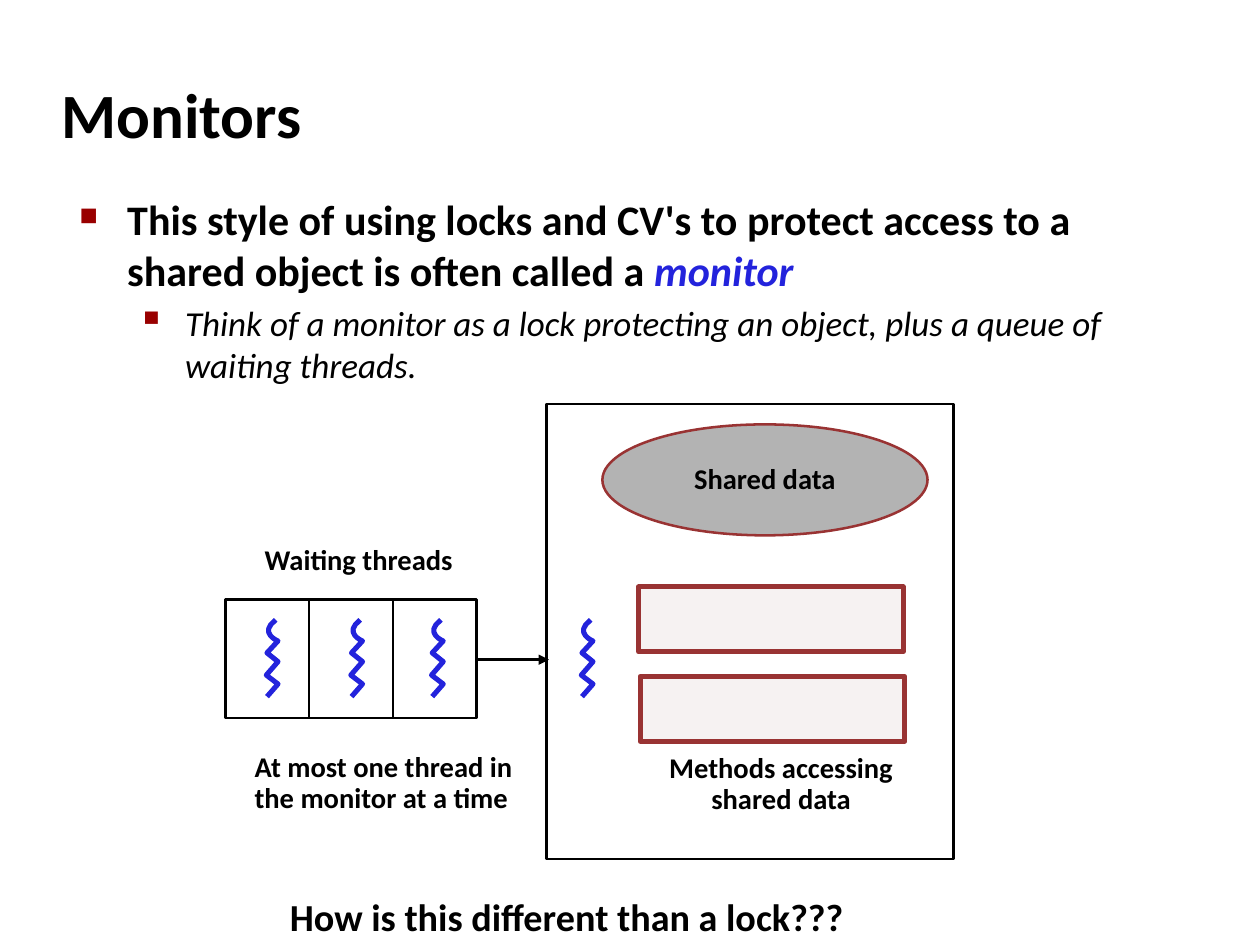
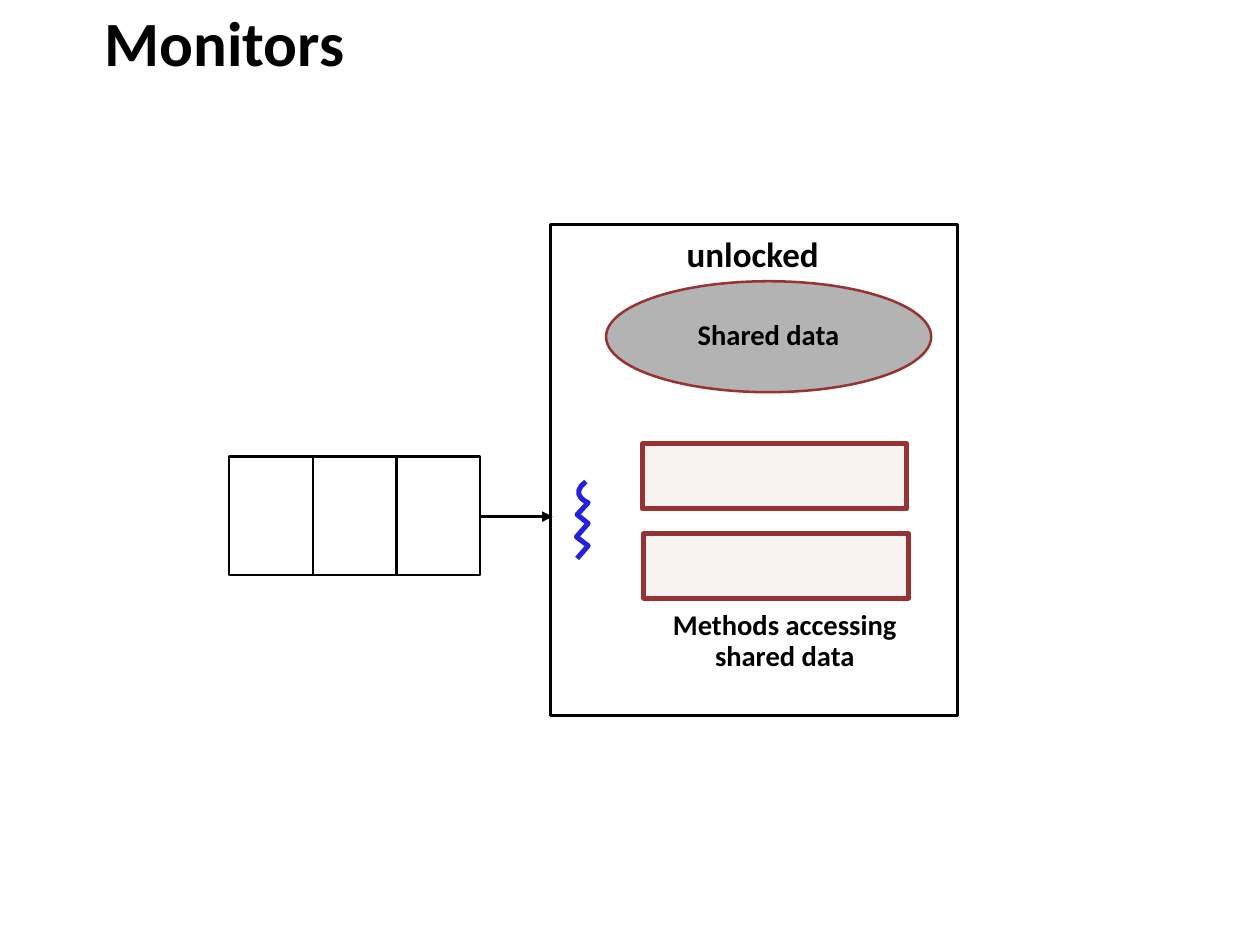
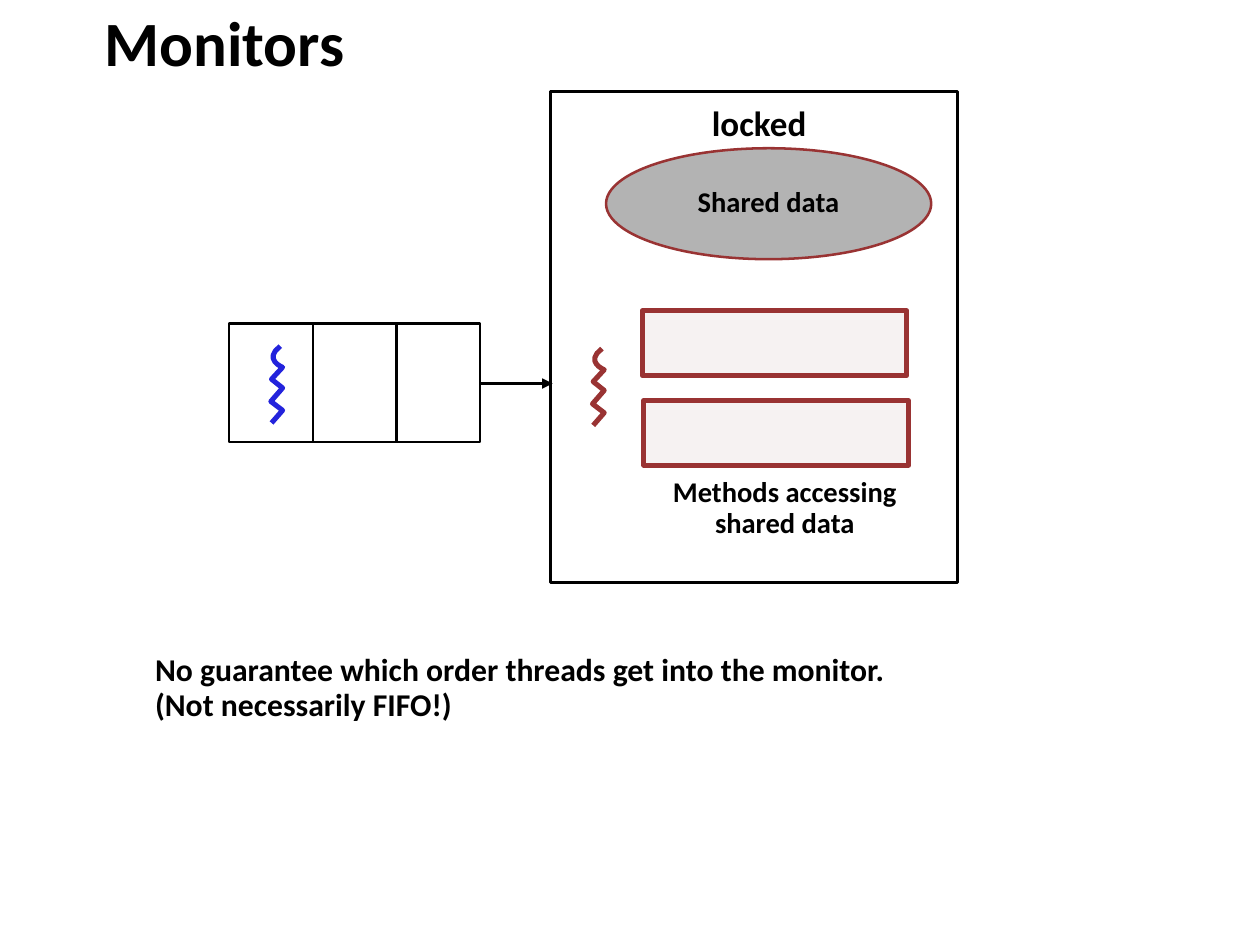
from lxml.etree import SubElement
from pptx import Presentation
from pptx.dml.color import RGBColor
from pptx.enum.shapes import MSO_CONNECTOR as Connector, MSO_SHAPE as Preset
from pptx.enum.text import MSO_ANCHOR as Anchor, PP_ALIGN as Align
from pptx.oxml.ns import qn
from pptx.util import Pt

BLACK, BLUE, RED = "000000", "2323DC", "993333"
BULLET_RED, DATA_GREY, METHOD_FILL = "990000", "B3B3B3", "F6F2F2"
FONT = "Calibri"
THIN, THICK = 1.45, 2.89
LABEL_SIZE = 16.3
CELL_WIDTH, CELL_HEIGHT, CELLS = 47.8, 67.7, 3

# Outline of a thread: a curved head, then a zigzag
HEAD_START, HEAD_PULL, HEAD_END = (10, 0), (0, 7.6), (11.3, 12.1)
ZIGZAG = [(5, 18.9), (11.3, 23.9), (4.6, 31.6), (11.3, 36.7), (5, 43.9)]


def color(hex_value):
    return RGBColor.from_string(hex_value)


def apply(target, values):
    for name, value in values.items():
        setattr(target, name, value)


def head_point(t):
    """Point on the cubic curve whose second control is its end."""
    return tuple((1 - t) ** 3 * a + 3 * t * (1 - t) ** 2 * b
                 + (3 * t * t * (1 - t) + t ** 3) * c
                 for a, b, c in zip(HEAD_START, HEAD_PULL, HEAD_END))


class Deck:
    def __init__(self):
        self.show = Presentation()
        apply(self.show, {"slide_width": Pt(720), "slide_height": Pt(540)})
        self.shapes = None

    def slide(self, title, left, top, width, height):
        self.shapes = self.show.slides.add_slide(self.show.slide_layouts[6]).shapes
        frame = self.box(left, top, width, height, (7.2, 3.6), Anchor.MIDDLE)
        self.run(frame.paragraphs[0], title, 36)

    # Text
    def frame(self, shape, inset, anchor):
        side, end = map(Pt, inset)
        frame = shape.text_frame
        apply(frame, {"word_wrap": True, "vertical_anchor": anchor,
                      "margin_left": side, "margin_right": side,
                      "margin_top": end, "margin_bottom": end})
        return frame

    def box(self, left, top, width, height, inset=(6.5, 3.25), anchor=Anchor.TOP):
        shape = self.shapes.add_textbox(Pt(left), Pt(top), Pt(width), Pt(height))
        return self.frame(shape, inset, anchor)

    def run(self, paragraph, text, size, ink=BLACK, bold=True, italic=False):
        run = paragraph.add_run()
        run.text = text
        apply(run.font, {"name": FONT, "size": Pt(size), "bold": bold, "italic": italic})
        run.font.color.rgb = color(ink)

    def fill_lines(self, frame, lines, size, align, spacing):
        for i, line in enumerate(lines):
            paragraph = frame.add_paragraph() if i else frame.paragraphs[0]
            apply(paragraph, {"alignment": align, "line_spacing": spacing})
            self.run(paragraph, line, size)

    def label(self, lines, left, top, width, height, size=LABEL_SIZE,
              align=Align.LEFT, spacing=0.9):
        self.fill_lines(self.box(left, top, width, height), lines, size, align, spacing)

    def bullet(self, paragraph, symbol, percent, margin, space):
        paragraph.space_before = Pt(space)
        properties = paragraph._p.get_or_add_pPr()
        properties.set("marL", str(Pt(margin)))
        properties.set("indent", str(-Pt(27.4)))
        ink = SubElement(properties, qn("a:buClr"))
        SubElement(ink, qn("a:srgbClr")).set("val", BULLET_RED)
        SubElement(properties, qn("a:buSzPct")).set("val", str(percent * 1000))
        SubElement(properties, qn("a:buChar")).set("char", symbol)

    # Outlines
    def style(self, shape, ink, weight, fill=None):
        shape.shadow.inherit = False
        if fill:
            shape.fill.solid()
            shape.fill.fore_color.rgb = color(fill)
        else:
            shape.fill.background()
        shape.line.color.rgb = color(ink)
        shape.line.width = Pt(weight)

    def block(self, left, top, width, height, ink=BLACK, weight=THIN, fill=None,
              preset=Preset.ROUNDED_RECTANGLE):
        shape = self.shapes.add_shape(preset, Pt(left), Pt(top), Pt(width), Pt(height))
        if preset == Preset.ROUNDED_RECTANGLE:
            shape.adjustments[0] = 0
        self.style(shape, ink, weight, fill)
        return shape

    def thread(self, left, top, ink=BLUE):
        points = [head_point(i / 8) for i in range(9)] + ZIGZAG
        start, *rest = [(Pt(left + x), Pt(top + y)) for x, y in points]
        builder = self.shapes.build_freeform(*start)
        builder.add_line_segments(rest, close=False)
        self.style(builder.convert_to_shape(), ink, THICK)

    def arrow(self, left, right, y):
        link = self.shapes.add_connector(Connector.STRAIGHT, Pt(left), Pt(y), Pt(right), Pt(y))
        link.line.color.rgb = color(BLACK)
        link.line.width = Pt(THIN)
        SubElement(link.line._get_or_add_ln(), qn("a:tailEnd")).set("type", "triangle")
        SubElement(link._element.spPr, qn("a:effectLst"))

    # The whole diagram, placed by the top left corner of its queue
    def monitor(self, left, top, rise, height, threads):
        data = self.block(left + 215.3, top - 100.1, 185.8, 63.4, RED, THIN,
                          DATA_GREY, Preset.OVAL)
        self.fill_lines(self.frame(data, (0.7, 0.7), Anchor.MIDDLE), ["Shared data"],
                        LABEL_SIZE, Align.CENTER, 0.9)
        for i in range(2):
            self.block(left + 236 + 0.9 * i, top - 7.2 + 51.2 * i, 151.2, 37,
                       RED, THICK, METHOD_FILL)
        self.label(["Methods accessing", "shared data"], left + 241.2, top + 85,
                   152.6, 43.2, align=Align.CENTER)
        self.block(left + 183.5, top - rise, 232.6, height)
        for i in range(CELLS):
            self.block(left + CELL_WIDTH * i, top, CELL_WIDTH, CELL_HEIGHT)
        self.arrow(left + CELLS * CELL_WIDTH, left + 184.8, top + 34.4)
        for x, y, ink in threads:
            self.thread(left + x, top + y, ink)


def main():
    deck = Deck()

    # Definition of a monitor
    deck.slide("Monitors", 28.1, 34.6, 597.6, 59.8)
    body = deck.box(31, 107.3, 622, 391.7, (7.2, 3.6))
    style_point = body.paragraphs[0]
    deck.bullet(style_point, "■", 60, 34.6, 4.8)
    deck.run(style_point, "This style of using locks and CV's to protect access to a "
                          "shared object is often called a ", 24)
    deck.run(style_point, "monitor", 24, BLUE, italic=True)
    queue_point = body.add_paragraph()
    queue_point.level = 1
    deck.bullet(queue_point, "▪", 110, 67.7, 4)
    deck.run(queue_point, "Think of a monitor as a lock protecting an object, plus a "
                          "queue of waiting threads.", 20, bold=False, italic=True)
    deck.monitor(128.9, 342.6, 111.6, 260,
                 [(x, 11.6, BLUE) for x in (18.7, 67, 113.1, 198.7)])
    deck.label(["Waiting threads"], 144.7, 308.9, 142.6, 25.2)
    deck.label(["At most one thread in the monitor at a time"], 139, 427, 167.8, 61.2)
    deck.label(["How is this different than a lock???"], 159.1, 506.9, 350, 33.1,
               size=21.8, spacing=1.02)

    # Unlocked and locked states
    state_title = ("Monitors", 52.6, 7.2, 614.9, 33.1)
    deck.slide(*state_title)
    deck.monitor(131, 260.8, 132.6, 280.8, [(193.8, 14.4, BLUE)])
    deck.label(["unlocked"], 385.9, 131.8, 108.7, 26.6, size=20, spacing=0.92)

    deck.slide(*state_title)
    deck.monitor(131, 184.8, 132.6, 280.8, [(203, 14.4, RED), (19.2, 13, BLUE)])
    deck.label(["locked"], 400.3, 56.9, 85, 26.6, size=20, spacing=0.92)
    deck.label(["No guarantee which order threads get into the monitor.",
                "(Not necessarily FIFO!)"], 82.1, 370.8, 450, 47.5, size=18.1)

    deck.show.save("out.pptx")


if __name__ == "__main__":
    main()
